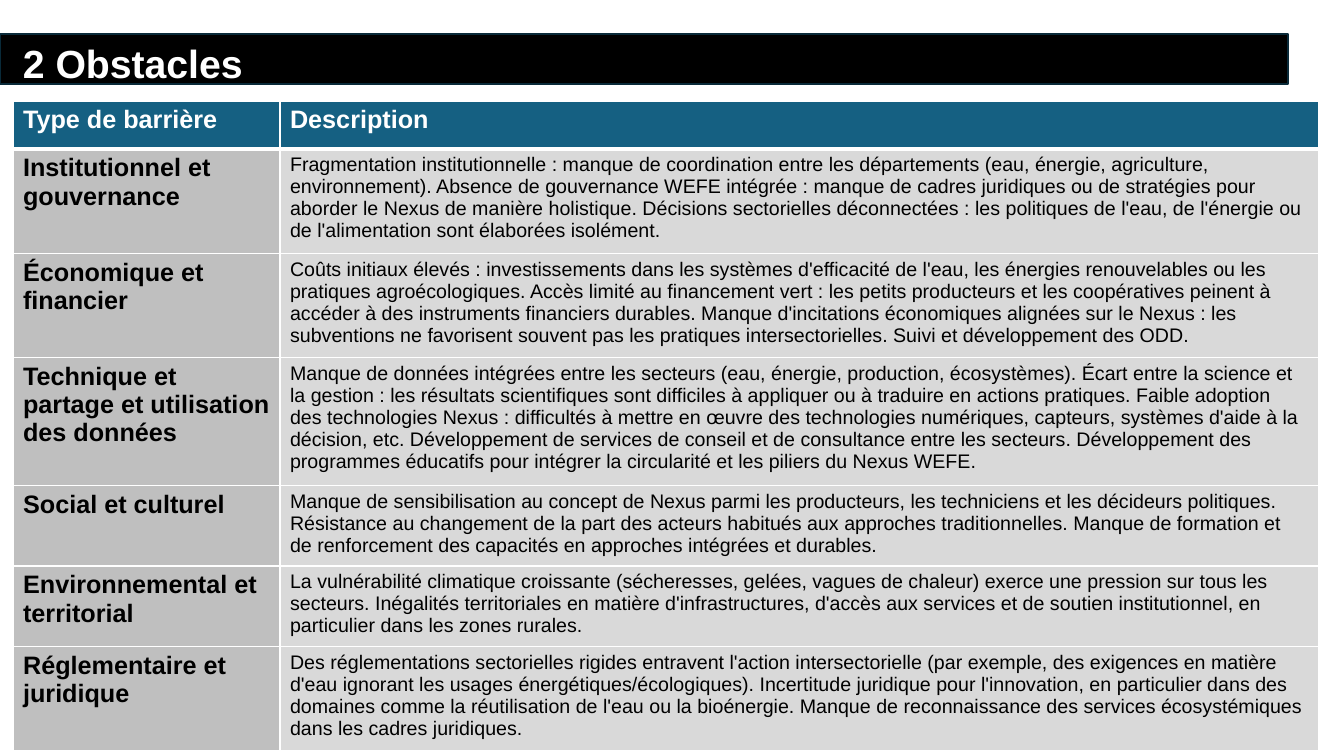
from pptx import Presentation
from pptx.dml.color import RGBColor
from pptx.enum.shapes import MSO_SHAPE
from pptx.enum.text import MSO_ANCHOR
from pptx.oxml import parse_xml
from pptx.oxml.ns import nsdecls
from pptx.util import Pt

RECT = MSO_SHAPE.RECTANGLE
TOP = MSO_ANCHOR.TOP
MIDDLE = MSO_ANCHOR.MIDDLE
SCALE = 914400 / 100.8
THEME = {
    "font": "Arial",
    "black": "000000",
    "white": "FFFFFF",
    "edge": "092A39",
    "head": "156082",
    "type": "BFBFBF",
    "body": "D9D9D9",
    "title_size": 28,
    "label_size": 18,
    "text_size": 14,
}


def px(*sizes):
    return [round(size * SCALE) for size in sizes]


def write(frame, text, size="label_size", color="black", bold=True, anchor=TOP, spacing=1.0):
    frame.word_wrap = True
    frame.vertical_anchor = anchor
    para = frame.paragraphs[0]
    para.line_spacing = spacing
    run = para.add_run()
    run.text = text
    run.font.name = THEME["font"]
    run.font.size = Pt(THEME[size])
    run.font.bold = bold
    run.font.color.rgb = RGBColor.from_string(THEME[color])


ROWS = [
    ("Type de barrière", "Description"),
    ("Institutionnel et gouvernance",
     "Fragmentation institutionnelle : manque de coordination entre les départements "
     "(eau, énergie, agriculture, environnement). Absence de gouvernance WEFE intégrée : "
     "manque de cadres juridiques ou de stratégies pour aborder le Nexus de manière holistique. "
     "Décisions sectorielles déconnectées : les politiques de l'eau, de l'énergie ou "
     "de l'alimentation sont élaborées isolément."),
    ("Économique et financier",
     "Coûts initiaux élevés : investissements dans les systèmes d'efficacité de l'eau, "
     "les énergies renouvelables ou les pratiques agroécologiques. Accès limité au financement "
     "vert : les petits producteurs et les coopératives peinent à accéder à des instruments "
     "financiers durables. Manque d'incitations économiques alignées sur le Nexus : les "
     "subventions ne favorisent souvent pas les pratiques intersectorielles. "
     "Suivi et développement des ODD."),
    ("Technique et partage et utilisation des données",
     "Manque de données intégrées entre les secteurs (eau, énergie, production, écosystèmes). "
     "Écart entre la science et la gestion : les résultats scientifiques sont difficiles à "
     "appliquer ou à traduire en actions pratiques. Faible adoption des technologies Nexus : "
     "difficultés à mettre en œuvre des technologies numériques, capteurs, systèmes d'aide à la "
     "décision, etc. Développement de services de conseil et de consultance entre les secteurs. "
     "Développement des programmes éducatifs pour intégrer la circularité et les piliers "
     "du Nexus WEFE."),
    ("Social et culturel",
     "Manque de sensibilisation au concept de Nexus parmi les producteurs, les techniciens et "
     "les décideurs politiques. Résistance au changement de la part des acteurs habitués aux "
     "approches traditionnelles. Manque de formation et de renforcement des capacités en "
     "approches intégrées et durables."),
    ("Environnemental et territorial",
     "La vulnérabilité climatique croissante (sécheresses, gelées, vagues de chaleur) exerce "
     "une pression sur tous les secteurs. Inégalités territoriales en matière d'infrastructures, "
     "d'accès aux services et de soutien institutionnel, en particulier dans les zones rurales."),
    ("Réglementaire et juridique",
     "Des réglementations sectorielles rigides entravent l'action intersectorielle (par exemple, "
     "des exigences en matière d'eau ignorant les usages énergétiques/écologiques). Incertitude "
     "juridique pour l'innovation, en particulier dans des domaines comme la réutilisation de "
     "l'eau ou la bioénergie. Manque de reconnaissance des services écosystémiques dans les "
     "cadres juridiques."),
]

deck = Presentation()
deck.slide_width, deck.slide_height = px(1344, 756)
slide = deck.slides.add_slide(deck.slide_layouts[6])

bar = slide.shapes.add_shape(RECT, *px(0, 34, 1288, 50))
bar.shadow.inherit = False
bar.fill.solid()
bar.fill.fore_color.rgb = RGBColor.from_string(THEME["black"])
bar.line.color.rgb = RGBColor.from_string(THEME["edge"])
bar.line.width = Pt(1.5)

title = slide.shapes.add_textbox(*px(13, 31, 1011, 69))
write(title.text_frame, "2 Obstacles", size="title_size", color="white", anchor=MIDDLE, spacing=0.9)

frame = slide.shapes.add_table(len(ROWS), 2, *px(13, 101, 1306, 650))
table = frame.table
for col, width in zip(table.columns, px(267, 1039)):
    col.width = width

for r, texts in enumerate(ROWS):
    table.rows[r].height = px(64 if r else 48)[0]
    for c, text in enumerate(texts):
        cell = table.cell(r, c)
        head = r == 0
        label = head or c == 0
        write(cell.text_frame, text, size="label_size" if label else "text_size",
              color="white" if head else "black", bold=label)
        edges = {"L": 1, "R": 1, "T": 3 if r == 1 else 1, "B": 3 if head else 1}
        props = cell._tc.get_or_add_tcPr()
        for side, width in edges.items():
            props.append(parse_xml(
                f'<a:ln{side} {nsdecls("a")} w="{Pt(width)}"><a:solidFill>'
                f'<a:srgbClr val="{THEME["white"]}"/></a:solidFill></a:ln{side}>'))
        cell.fill.solid()
        tone = "head" if head else ("type", "body")[c]
        cell.fill.fore_color.rgb = RGBColor.from_string(THEME[tone])

frame.height = px(650)[0]
deck.save("out.pptx")
